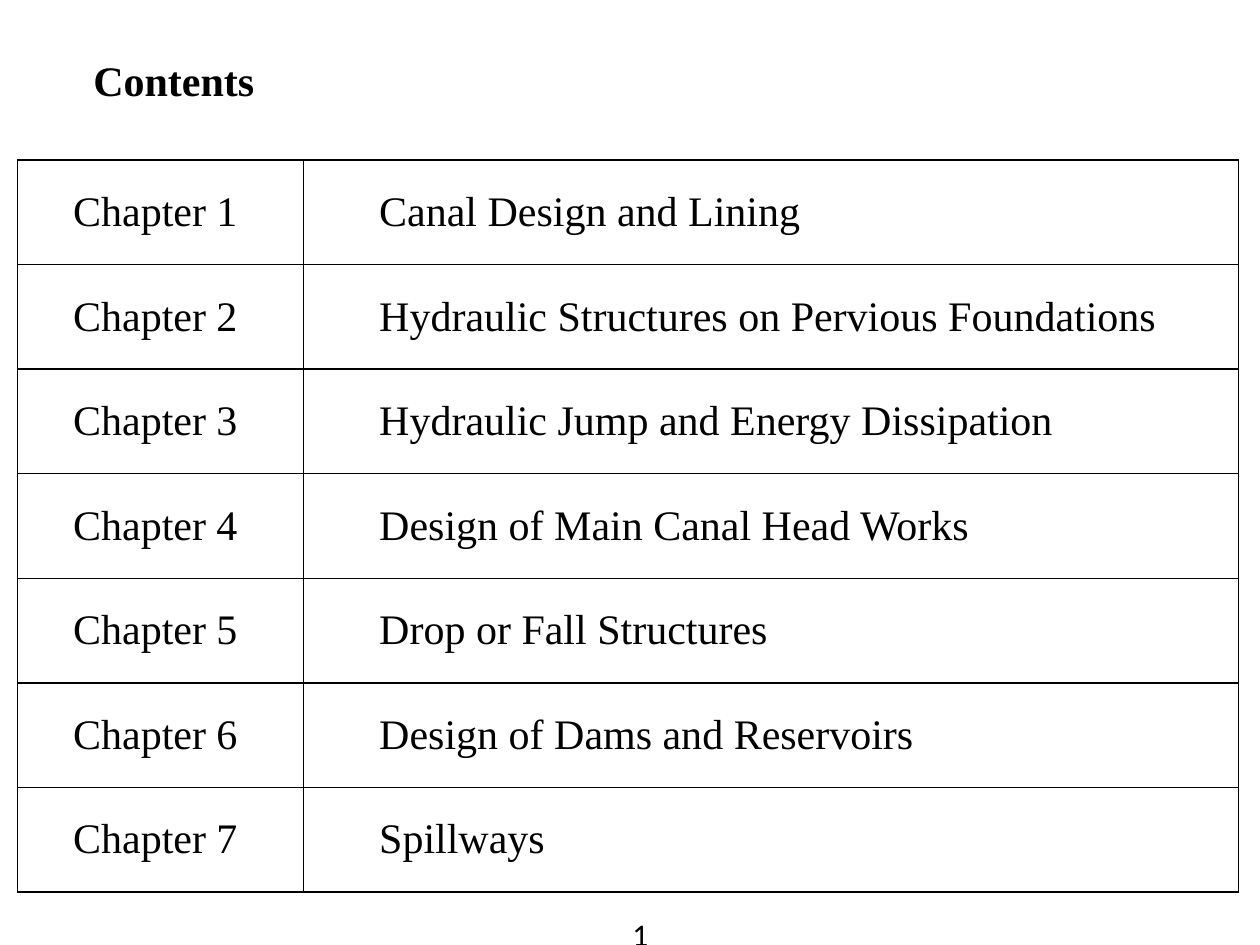
import pptx
import pptx.dml.color
import pptx.enum.text
import pptx.oxml
import pptx.oxml.ns
import pptx.util
from pptx.util import Inches

CHAPTERS = [
    "Canal Design and Lining",
    "Hydraulic Structures on Pervious Foundations",
    "Hydraulic Jump and Energy Dissipation",
    "Design of Main Canal Head Works",
    "Drop or Fall Structures",
    "Design of Dams and Reservoirs",
    "Spillways",
]
COLUMN_WIDTHS = [2.27, 7.42]
HEADING_HEIGHT = 1.23
CHAPTER_HEIGHT = 0.83
ALL_SIDES = "LRTB"


def color(hex_value):
    return pptx.dml.color.RGBColor.from_string(hex_value)


class ContentsSlide:
    ink = "000000"
    table_font = "Times New Roman"
    table_size = 24
    number_font = "Calibri"
    number_size = 18
    border_width = 1

    def __init__(self, slide):
        self.slide = slide

    def format_text(self, paragraph, font_name, size, bold=False):
        for run in paragraph.runs:
            run.font.name = font_name
            run.font.size = pptx.util.Pt(size)
            run.font.bold = bold
            run.font.color.rgb = color(self.ink)

    def borders(self, cell, sides):
        """Draw the given sides of the cell and leave the others without a line."""
        properties = cell._tc.get_or_add_tcPr()
        width = pptx.util.Pt(self.border_width)
        for side in ALL_SIDES:
            if side in sides:
                paint = f'<a:solidFill><a:srgbClr val="{self.ink}"/></a:solidFill>'
            else:
                paint = "<a:noFill/>"
            properties.append(pptx.oxml.parse_xml(
                f'<a:ln{side} {pptx.oxml.ns.nsdecls("a")} w="{width}">{paint}</a:ln{side}>'))

    def cell(self, cell, text, sides=ALL_SIDES, centered=False, bold=False):
        self.borders(cell, sides)
        cell.fill.background()
        cell.vertical_anchor = pptx.enum.text.MSO_ANCHOR.MIDDLE
        cell.text_frame.text = text
        paragraph = cell.text_frame.paragraphs[0]
        if centered:
            paragraph.alignment = pptx.enum.text.PP_ALIGN.CENTER
        elif text:
            paragraph.level = 1
            indent = paragraph._p.get_or_add_pPr()
            indent.set("marL", str(Inches(0.5)))
            indent.set("indent", "0")
        self.format_text(paragraph, self.table_font, self.table_size, bold)

    def contents_table(self, left, top, heading, chapters):
        height = HEADING_HEIGHT + CHAPTER_HEIGHT * len(chapters)
        table = self.slide.shapes.add_table(
            len(chapters) + 1, len(COLUMN_WIDTHS), Inches(left), Inches(top),
            Inches(sum(COLUMN_WIDTHS)), Inches(height)).table
        table.first_row = False
        table.horz_banding = False
        for column, width in zip(table.columns, COLUMN_WIDTHS):
            column.width = Inches(width)
        for row in table.rows:
            row.height = Inches(CHAPTER_HEIGHT)
        table.rows[0].height = Inches(HEADING_HEIGHT)

        table.cell(0, 0).merge(table.cell(0, 1))
        self.cell(table.cell(0, 0), heading, sides="B", bold=True)
        self.cell(table.cell(0, 1), "", sides="B")
        for number, chapter in enumerate(chapters, start=1):
            self.cell(table.cell(number, 0), f"Chapter {number} ", centered=True)
            self.cell(table.cell(number, 1), chapter)

    def page_number(self, left, top, width, height, number):
        box = self.slide.shapes.add_textbox(
            Inches(left), Inches(top), Inches(width), Inches(height))
        frame = box.text_frame
        frame.word_wrap = True
        frame.auto_size = pptx.enum.text.MSO_AUTO_SIZE.SHAPE_TO_FIT_TEXT
        frame.text = str(number)
        self.format_text(frame.paragraphs[0], self.number_font, self.number_size)


def main():
    deck = pptx.Presentation()
    deck.slide_width = Inches(10)
    deck.slide_height = Inches(7.5)
    blank_layout = deck.slide_layouts[6]
    contents = ContentsSlide(deck.slides.add_slide(blank_layout))
    contents.contents_table(0.14, 0.04, "Contents", CHAPTERS)
    contents.page_number(4.92, 7.21, 0.43, 0.4, 1)
    deck.save("out.pptx")


if __name__ == "__main__":
    main()
